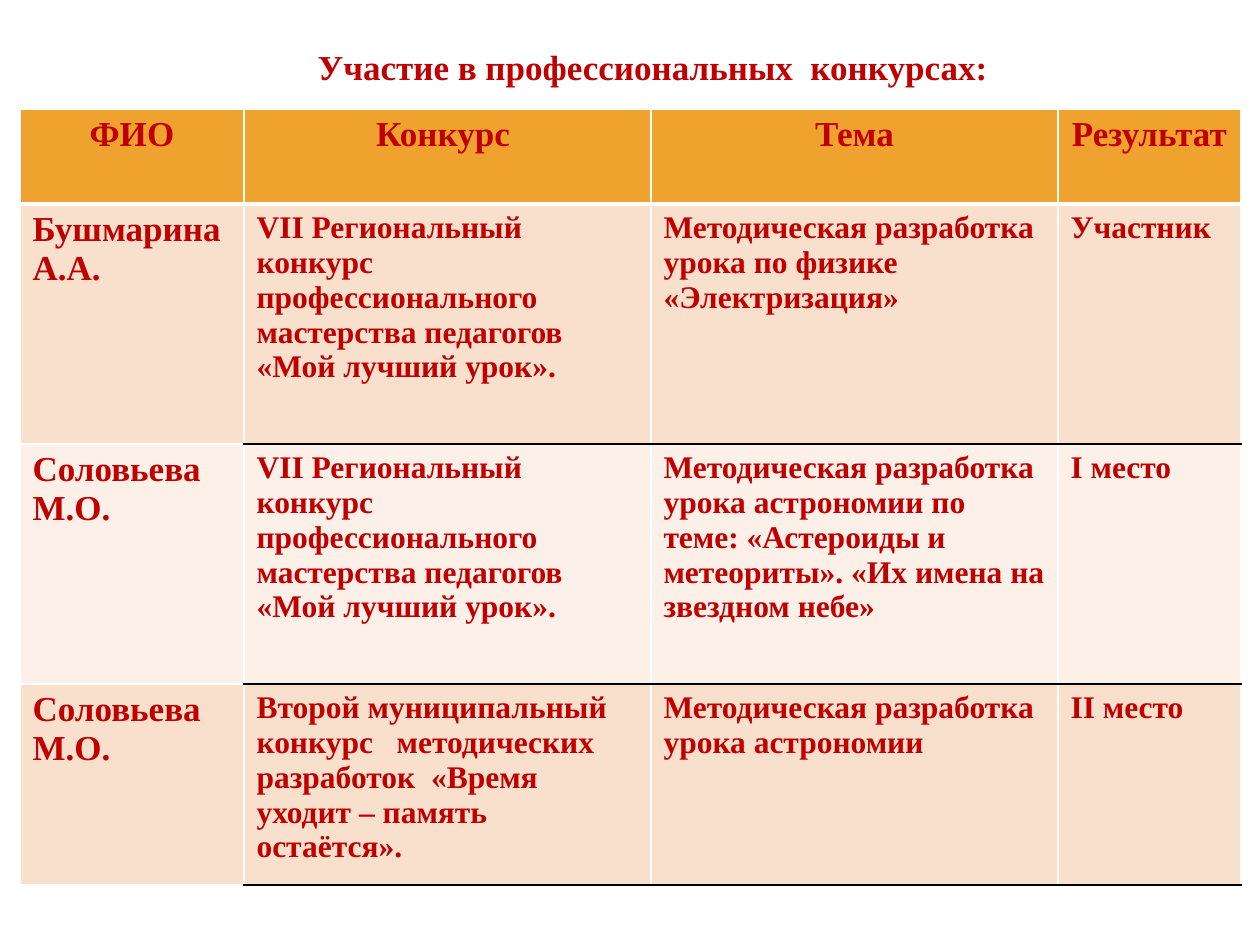
from dataclasses import dataclass

from lxml import etree
from pptx import Presentation
from pptx.dml.color import RGBColor
from pptx.enum.text import MSO_ANCHOR, MSO_AUTO_SIZE, PP_ALIGN
from pptx.oxml.ns import qn
from pptx.util import Emu, Pt

LEFT, CENTER = PP_ALIGN.LEFT, PP_ALIGN.CENTER
MIDDLE = MSO_ANCHOR.MIDDLE
NO_AUTOFIT = MSO_AUTO_SIZE.NONE
TITLE_ONLY = 5
PX_PER_INCH = 126


@dataclass(frozen=True)
class Theme:
    font: str = "Times New Roman"
    text: str = "C00000"
    header: str = "F0A22E"
    bands: tuple = ("F9E0CD", "FCF0E8")
    light_line: str = "FFFFFF"
    dark_line: str = "000000"
    large: int = 20
    normal: int = 18


THEME = Theme()

TITLE = "Участие в профессиональных  конкурсах:"
REGIONAL = ("VII Региональный конкурс профессионального мастерства "
            "педагогов «Мой лучший урок».")
ROWS = [
    ("ФИО", "Конкурс ", "Тема", "Результат "),
    ("Бушмарина А.А.", REGIONAL,
     "Методическая разработка урока по физике  «Электризация»", "Участник"),
    ("Соловьева М.О.", REGIONAL,
     "Методическая разработка урока астрономии по  теме: "
     "«Астероиды и метеориты». «Их имена на звездном небе»", "I место"),
    ("Соловьева М.О.",
     "Второй муниципальный конкурс   методических разработок  "
     "«Время уходит – память остаётся».",
     "Методическая разработка урока астрономии", "II место"),
]
COL_WIDTHS = (224, 407, 407, 183)
ROW_HEIGHTS = (95, 240, 240, 201)


def px(n):
    return Emu(round(n * 914400 / PX_PER_INCH))


def write_text(tf, text, size, align):
    tf.text = text
    p = tf.paragraphs[0]
    p.alignment = align
    p.font.name = THEME.font
    p.font.size = Pt(size)
    p.font.bold = True
    p.font.color.rgb = RGBColor.from_string(THEME.text)


def add_title(slide, text, left, top, width, height):
    title = slide.shapes.title
    title.left, title.top = px(left), px(top)
    title.width, title.height = px(width), px(height)
    tf = title.text_frame
    write_text(tf, text, THEME.large, LEFT)
    tf.word_wrap = False
    tf.auto_size = NO_AUTOFIT
    tf.vertical_anchor = MIDDLE


def rule_below(row, col):
    """Colour and width of the line under a cell."""
    if row < 0:
        return THEME.light_line, 1
    if row == 0:
        return THEME.light_line, 3
    return (THEME.dark_line if col else THEME.light_line), 1


def set_borders(cell, row, col):
    side = (THEME.light_line, 1)
    borders = {"a:lnL": side, "a:lnR": side,
               "a:lnT": rule_below(row - 1, col),
               "a:lnB": rule_below(row, col)}
    tc_pr = cell._tc.get_or_add_tcPr()
    for tag, (color, width) in borders.items():
        ln = etree.SubElement(tc_pr, qn(tag), w=str(Pt(width)))
        fill = etree.SubElement(ln, qn("a:solidFill"))
        etree.SubElement(fill, qn("a:srgbClr"), val=color)


def format_cell(cell, row, col, text):
    is_header = row == 0
    size = THEME.large if is_header or col == 0 else THEME.normal
    write_text(cell.text_frame, text, size, CENTER if is_header else LEFT)
    set_borders(cell, row, col)
    color = THEME.header if is_header else THEME.bands[(row - 1) % 2]
    cell.fill.solid()
    cell.fill.fore_color.rgb = RGBColor.from_string(color)


def add_results_table(slide, left, top):
    table = slide.shapes.add_table(
        len(ROWS), len(COL_WIDTHS), px(left), px(top),
        px(sum(COL_WIDTHS)), px(sum(ROW_HEIGHTS))).table
    for column, width in zip(table.columns, COL_WIDTHS):
        column.width = px(width)
    for row, height in zip(table.rows, ROW_HEIGHTS):
        row.height = px(height)
    for r, texts in enumerate(ROWS):
        for c, text in enumerate(texts):
            format_cell(table.cell(r, c), r, c, text)


def main():
    prs = Presentation()
    prs.slide_width, prs.slide_height = px(1260), px(945)
    slide = prs.slides.add_slide(prs.slide_layouts[TITLE_ONLY])

    # Heading
    add_title(slide, TITLE, 305, 39, 701, 55)

    # Contest results
    add_results_table(slide, 20, 109)

    prs.save("out.pptx")


if __name__ == "__main__":
    main()
